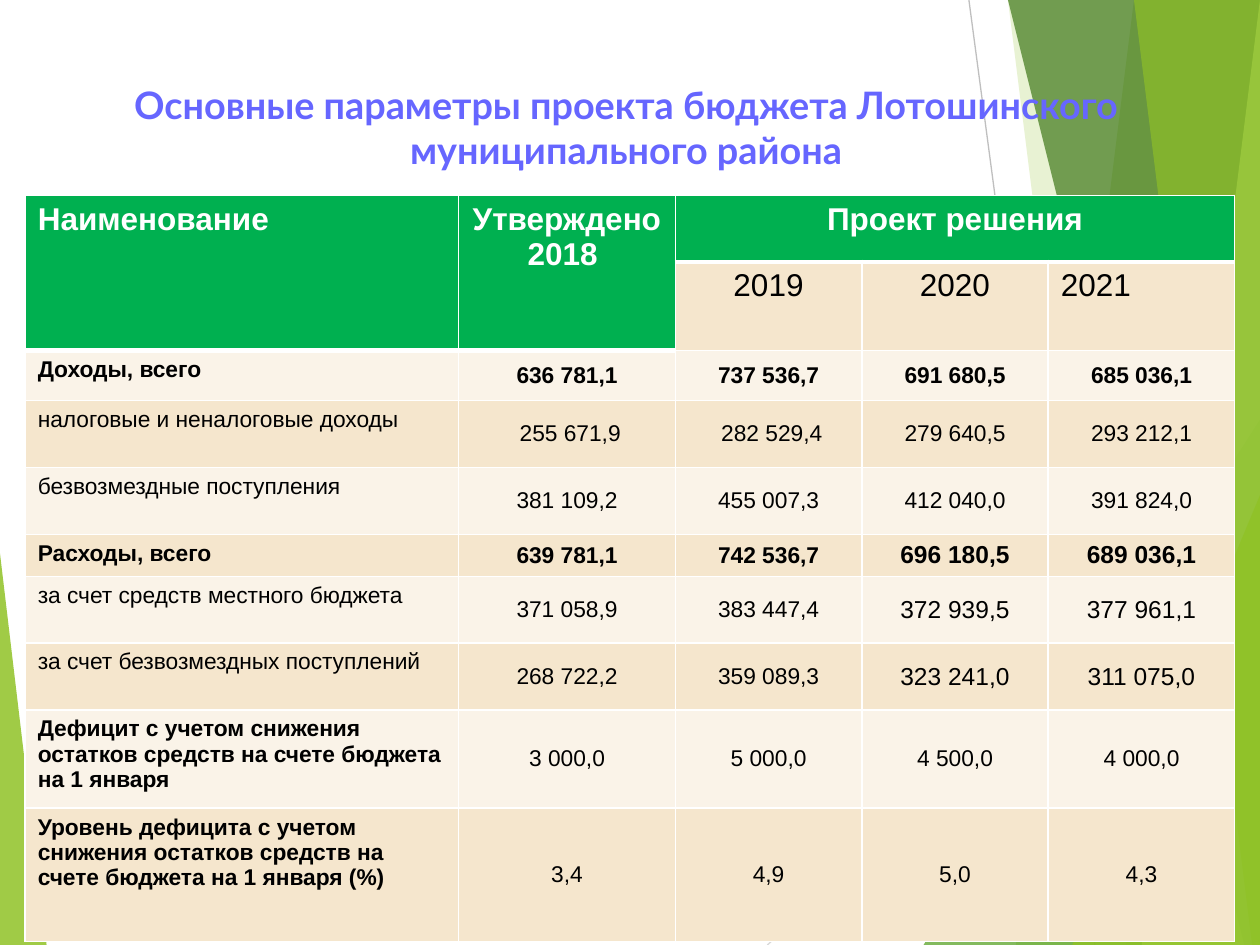
from lxml import etree
from pptx import Presentation
from pptx.dml.color import RGBColor
from pptx.enum.shapes import MSO_CONNECTOR, MSO_SHAPE
from pptx.enum.text import MSO_ANCHOR, PP_ALIGN
from pptx.oxml.ns import qn
from pptx.util import Inches, Pt

WIDTH, HEIGHT = 10, 7.5
FONT, TITLE_FONT = "Arial", "Lato"

WHITE = RGBColor(0xFF, 0xFF, 0xFF)
BLACK = RGBColor(0, 0, 0)
VIOLET = RGBColor(0x66, 0x66, 0xFF)
HEADER_GREEN = RGBColor(0x00, 0xB0, 0x50)
BANDS = RGBColor(0xF5, 0xE6, 0xCD), RGBColor(0xFA, 0xF3, 0xE8)
LIME = RGBColor(0x90, 0xC2, 0x26)
GREEN = RGBColor(0x54, 0xA0, 0x21)
DARK_GREEN = RGBColor(0x3F, 0x78, 0x19)
PALE_LIME = RGBColor(0xC0, 0xE4, 0x74)
GREY = RGBColor(0xBF, 0xBF, 0xBF)
LIGHT_GREY = RGBColor(0xD9, 0xD9, 0xD9)

TITLE = "Основные параметры проекта бюджета Лотошинского муниципального района"

# Header cells: text, first row and column, last row and column, alignment
HEADERS = [
    ("Наименование", (0, 0), (1, 0), PP_ALIGN.LEFT),
    ("Утверждено 2018 ", (0, 1), (1, 1), PP_ALIGN.CENTER),
    ("Проект решения", (0, 2), (0, 4), PP_ALIGN.CENTER),
]
YEARS = [("2019", PP_ALIGN.CENTER), ("2020", PP_ALIGN.CENTER), ("2021", PP_ALIGN.LEFT)]

# Body rows: label, values, bold label, bold values, size of the last two values
BODY = [
    ("Доходы, всего", ["636 781,1", "737 536,7", "691 680,5", "685 036,1"], True, True, 13),
    ("налоговые и неналоговые доходы",
     [" 255 671,9", " 282 529,4", "279 640,5", "293 212,1"], False, False, 13),
    ("безвозмездные поступления",
     ["381 109,2", "455 007,3", "412 040,0", "391 824,0"], False, False, 13),
    ("Расходы, всего", ["639 781,1", "742 536,7", "696 180,5", "689 036,1"], True, True, 14),
    ("за счет средств местного бюджета",
     ["371 058,9", "383 447,4", "372 939,5", "377 961,1"], False, False, 14),
    ("за счет безвозмездных поступлений",
     ["268 722,2", "359 089,3", "323 241,0", "311 075,0"], False, False, 14),
    ("Дефицит с учетом снижения остатков средств на счете бюджета на 1 января",
     ["3 000,0", "5 000,0", "4 500,0", "4 000,0"], True, False, 13),
    ("Уровень дефицита с учетом снижения остатков средств на счете бюджета на 1 января (%)",
     ["3,4", "4,9", "5,0", "4,3"], True, False, 13),
]
COLUMNS = [3.44, 1.72, 1.48, 1.48, 1.48]
ROWS = [0.53, 0.66, 0.4, 0.53, 0.53, 0.33, 0.53, 0.53, 0.78, 1.06]

# Background: lines by their ends, bands by the left edge at top and bottom,
# triangles by left, top, width and apex position; all reach the slide's bottom
LINES = [((7.69, 0), (8.69, HEIGHT), GREY), ((WIDTH, 4.03), (6.09, HEIGHT), LIGHT_GREY)]
DECOR = [
    ("band", (9.21, 7.53), LIME, 30),
    ("band", (7.88, 8.87), LIME, 20),
    ("triangle", (7.33, 3.33, 2.67, 1), GREEN, 72),
    ("band", (7.66, 9.68), DARK_GREEN, 70),
    ("band", (9.78, 8.94), PALE_LIME, 70),
    ("band", (8.97, 9.88), LIME, 65),
    ("triangle", (8.51, 3.93, 1.49, 1), LIME, 80),
    ("triangle", (0, 4.39, 0.37, 0), LIME, 85),
]


def draw_line(page, start, end, color):
    line = page.shapes.add_connector(MSO_CONNECTOR.STRAIGHT, *map(Inches, start + end))
    line.line.color.rgb = color
    line.line.width = Pt(0.75)
    etree.SubElement(line._element.spPr, qn("a:effectLst"))


def draw_band(page, top_x, bottom_x):
    builder = page.shapes.build_freeform(top_x, 0, scale=Inches(1))
    builder.add_line_segments([(WIDTH, 0), (WIDTH, HEIGHT), (bottom_x, HEIGHT)], close=True)
    return builder.convert_to_shape()


def draw_triangle(page, left, top, width, apex):
    triangle = page.shapes.add_shape(
        MSO_SHAPE.ISOSCELES_TRIANGLE, *map(Inches, (left, top, width, HEIGHT - top)))
    triangle.adjustments[0] = apex
    return triangle


def paint(shape, color, opacity):
    shape.shadow.inherit = False
    shape.line.fill.background()
    shape.fill.solid()
    shape.fill.fore_color.rgb = color
    tint = shape._element.spPr.find(qn("a:solidFill"))[0]
    etree.SubElement(tint, qn("a:alpha"), val=str(opacity * 1000))


def write(frame, text, size, color, bold, align, font=FONT):
    para = frame.paragraphs[0]
    para.alignment = align
    span = para.add_run()
    span.text = text
    span.font.name, span.font.size, span.font.bold = font, Pt(size), bold
    span.font.color.rgb = color


def style_cell(cell, fill, borders):
    """Fill a cell and give it white borders, widths in points by side."""
    cell.fill.solid()
    cell.fill.fore_color.rgb = fill
    properties = cell._tc.get_or_add_tcPr()
    for place, (side, width) in enumerate(borders.items()):
        edge = etree.Element(qn(f"a:ln{side}"), w=str(Pt(width)))
        solid = etree.SubElement(edge, qn("a:solidFill"))
        etree.SubElement(solid, qn("a:srgbClr"), val=str(WHITE))
        properties.insert(place, edge)


def build_table(page):
    table = page.shapes.add_table(
        len(ROWS), len(COLUMNS),
        *map(Inches, (0.2, 1.55, sum(COLUMNS), sum(ROWS)))).table
    for column, width in zip(table.columns, COLUMNS):
        column.width = Inches(width)
    for row, height in zip(table.rows, ROWS):
        row.height = Inches(height)

    for text, first, last, align in HEADERS:
        for r in range(first[0], last[0] + 1):
            for c in range(first[1], last[1] + 1):
                style_cell(table.cell(r, c), HEADER_GREEN, {"L": 1, "R": 1, "T": 1, "B": 3})
        cell = table.cell(*first)
        cell.merge(table.cell(*last))
        write(cell.text_frame, text, 18, WHITE, True, align)

    thin = {"L": 1, "R": 1, "B": 1}
    for c, (year, align) in enumerate(YEARS, start=2):
        style_cell(table.cell(1, c), BANDS[0], thin)
        write(table.cell(1, c).text_frame, year, 18, BLACK, False, align)

    for r, (label, values, bold_label, bold_values, last_size) in enumerate(BODY, start=2):
        for c, text in enumerate([label, *values]):
            cell = table.cell(r, c)
            style_cell(cell, BANDS[(r + 1) % 2], thin)
            if c == 0:
                write(cell.text_frame, text, 13, BLACK, bold_label, PP_ALIGN.LEFT)
            else:
                cell.vertical_anchor = MSO_ANCHOR.MIDDLE
                size = last_size if c > 2 else 13
                write(cell.text_frame, text, size, BLACK, bold_values, PP_ALIGN.CENTER)


def main():
    deck = Presentation()
    deck.slide_width, deck.slide_height = Inches(WIDTH), Inches(HEIGHT)
    page = deck.slides.add_slide(deck.slide_layouts[6])

    for line in LINES:
        draw_line(page, *line)
    draw = {"band": draw_band, "triangle": draw_triangle}
    for kind, geometry, color, opacity in DECOR:
        paint(draw[kind](page, *geometry), color, opacity)

    title = page.shapes.add_textbox(*map(Inches, (0.28, 0.6, 9.38, 0.78))).text_frame
    title.word_wrap = True
    write(title, TITLE, 21.6, VIOLET, True, PP_ALIGN.CENTER, TITLE_FONT)
    build_table(page)
    deck.save("out.pptx")


if __name__ == "__main__":
    main()
